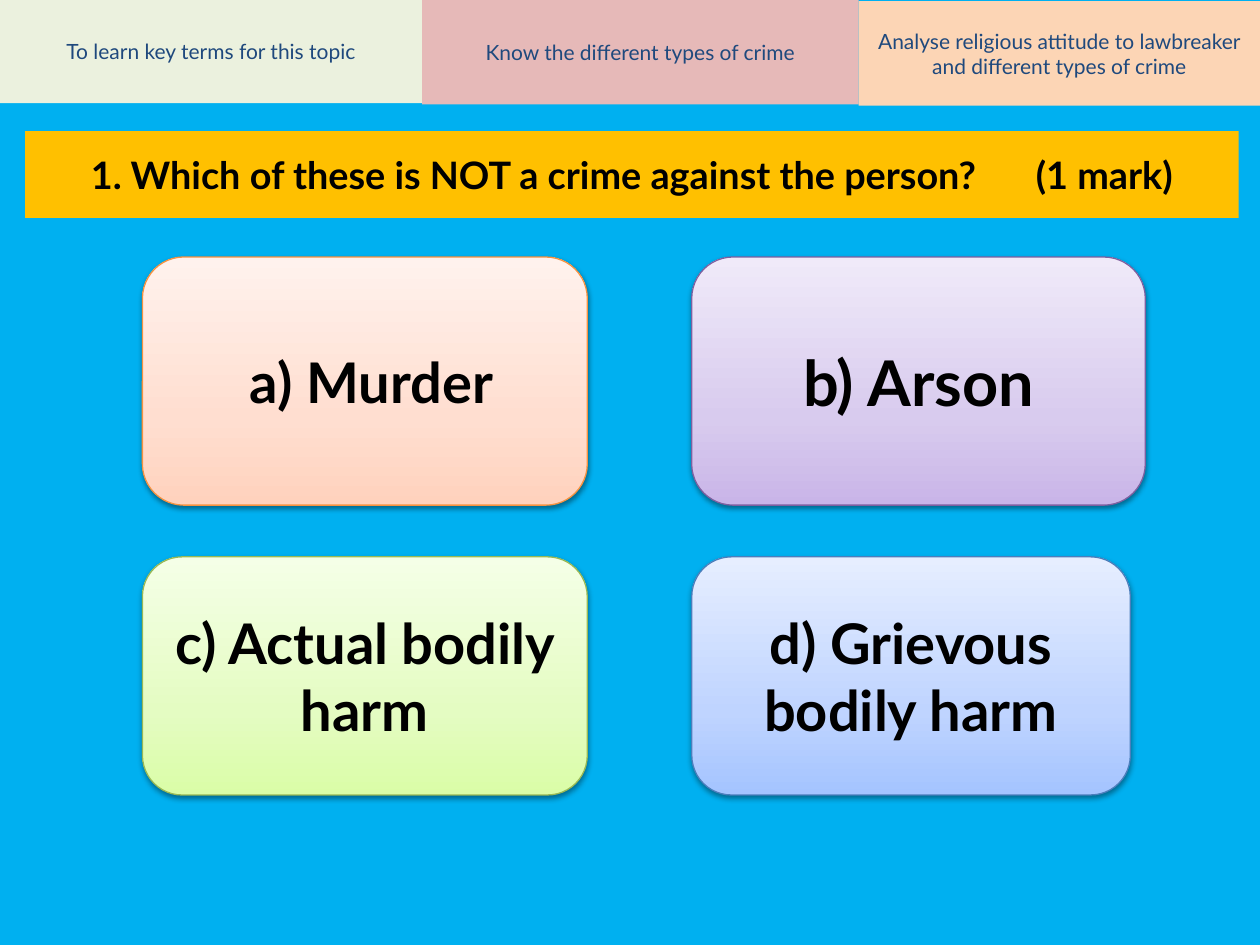
from copy import deepcopy

from lxml import etree
from pptx import Presentation
from pptx.dml.color import RGBColor
from pptx.enum.shapes import MSO_SHAPE
from pptx.enum.text import MSO_ANCHOR, PP_ALIGN
from pptx.oxml.ns import qn
from pptx.util import Pt

RECT = MSO_SHAPE.RECTANGLE
ROUNDED = MSO_SHAPE.ROUNDED_RECTANGLE
CENTER = PP_ALIGN.CENTER
MIDDLE = MSO_ANCHOR.MIDDLE
FONT = "Lato"

COLORS = {
    "background": "00B0F0", "question": "FFC000", "black": "000000", "navy": "1F497D",
    "green": "EBF1DE", "pink": "E6B9B8", "peach": "FCD5B5",
}
GRADIENTS = {
    "orange": ("FFD2BD", "FFDED0", "FFF2ED"),
    "purple": ("C9B5E8", "D8CBEE", "F0EAF9"),
    "lime": ("DAFDA7", "E4FCC2", "F5FFE7"),
    "blue": ("A4C4FF", "BFD4FF", "E6EEFF"),
}
OUTLINES = {"orange": "F69240", "purple": "7D60A0", "lime": "98B955", "blue": "4B7EBC"}
STOPS = (0, 0.35, 1)

QUESTION = "1. Which of these is NOT a crime against the person?\t(1 mark)"
QUESTION_BOX = (14.4, 74.9, 693.4, 49.7)

OBJECTIVES = [
    ("To learn key terms for this topic", "green", -0.7, 241.2),
    ("Know the different types of crime", "pink", 0, 249.5),
    ("Analyse religious attitude to lawbreaker and different types of crime", "peach", 0.7, 229.3),
]
OBJECTIVE_HEIGHT = 59.6

COLUMNS = (81.4, 395.3)
ROWS = ((146.9, 141.8), (318.2, 136.1))
ANSWERS = [
    (" a) Murder", "orange", 254.2, 32),
    ("b) Arson", "purple", 259.2, 36),
    ("c) Actual bodily harm", "lime", 254.2, 32),
    ("d) Grievous bodily harm", "blue", 250.6, 32),
]


def rgb(value):
    return RGBColor.from_string(value)


def add_box(slide, kind, box, text, size, color, bold=False):
    shape = slide.shapes.add_shape(kind, *map(Pt, box))
    shape.shadow.inherit = False
    frame = shape.text_frame
    frame.word_wrap = True
    frame.vertical_anchor = MIDDLE
    paragraph = frame.paragraphs[0]
    paragraph.alignment = CENTER
    run = paragraph.add_run()
    run.text = text
    run.font.name = FONT
    run.font.size = Pt(size)
    run.font.bold = bold
    run.font.color.rgb = rgb(COLORS[color])
    return shape


def add_banner(slide, box, text, size, color, fill, bold=False):
    banner = add_box(slide, RECT, box, text, size, color, bold)
    banner.fill.solid()
    banner.fill.fore_color.rgb = rgb(COLORS[fill])
    banner.line.fill.background()


def fill_gradient(shape, colors):
    shape.fill.gradient()
    shape.fill.gradient_angle = 90
    stop_list = shape.element.spPr.find(".//" + qn("a:gsLst"))
    stop_list.append(deepcopy(stop_list[0]))
    for stop, position, color in zip(shape.fill.gradient_stops, STOPS, colors):
        stop.position = position
        stop.color.rgb = rgb(color)


def add_shadow(shape):
    effects = shape.element.spPr.find(qn("a:effectLst"))
    shadow = etree.SubElement(
        effects, qn("a:outerShdw"), blurRad=str(Pt(3.1)), dist=str(Pt(1.6)),
        dir="5400000", rotWithShape="0")
    color = etree.SubElement(shadow, qn("a:srgbClr"), val=COLORS["black"])
    etree.SubElement(color, qn("a:alpha"), val="38000")


def main():
    prs = Presentation()
    prs.slide_width, prs.slide_height = Pt(720), Pt(540)
    slide = prs.slides.add_slide(prs.slide_layouts[6])
    slide.background.fill.solid()
    slide.background.fill.fore_color.rgb = rgb(COLORS["background"])

    add_banner(slide, QUESTION_BOX, QUESTION, 21.6, "black", "question", True)

    left = 0
    for text, fill, top, width in OBJECTIVES:
        add_banner(slide, (left, top, width, OBJECTIVE_HEIGHT), text, 12, "navy", fill)
        left += width

    for index, (text, theme, width, size) in enumerate(ANSWERS):
        row, column = divmod(index, len(COLUMNS))
        top, height = ROWS[row]
        answer = add_box(slide, ROUNDED, (COLUMNS[column], top, width, height),
                         text, size, "black", True)
        fill_gradient(answer, GRADIENTS[theme])
        answer.line.color.rgb = rgb(OUTLINES[theme])
        answer.line.width = Pt(0.75)
        add_shadow(answer)

    prs.save("out.pptx")


if __name__ == "__main__":
    main()
